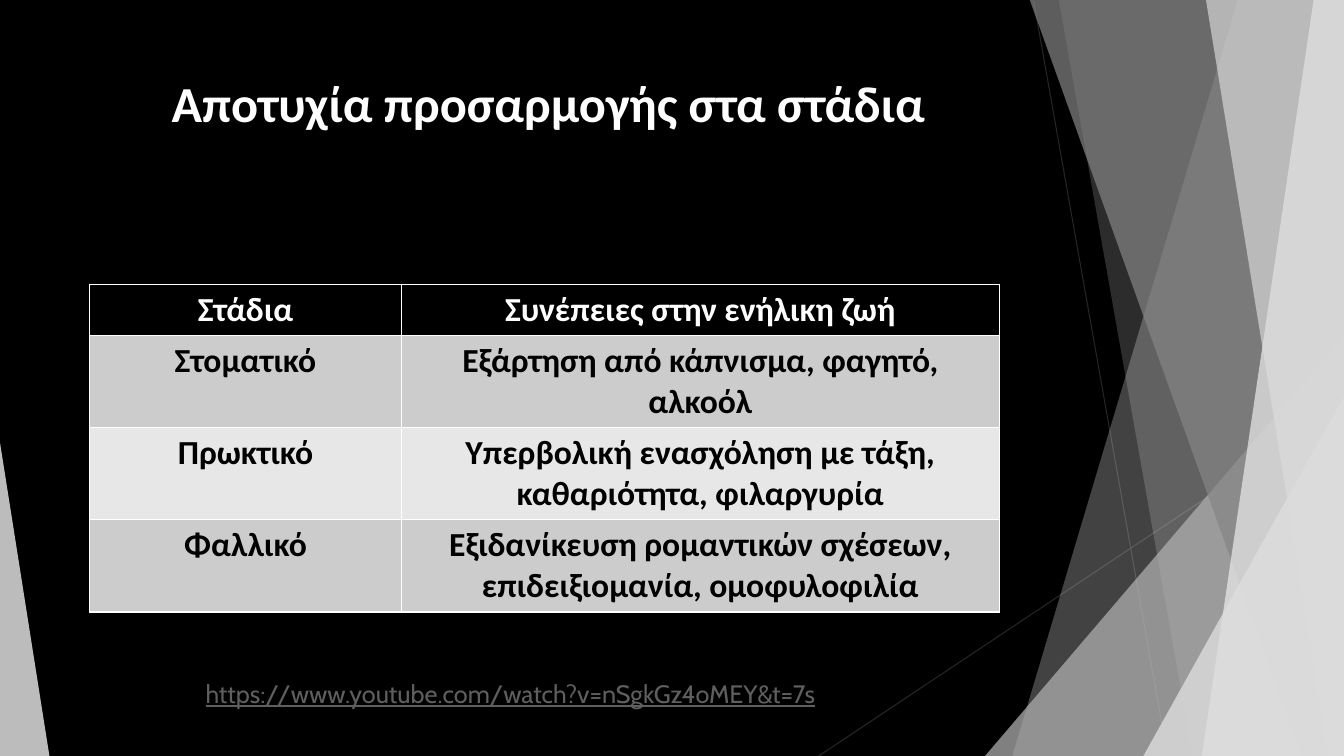
from dataclasses import dataclass

from lxml.etree import SubElement
from pptx import Presentation
from pptx.dml.color import RGBColor
from pptx.enum.shapes import MSO_CONNECTOR, MSO_SHAPE
from pptx.enum.text import MSO_ANCHOR, PP_ALIGN
from pptx.oxml.ns import qn
from pptx.util import Inches, Pt


@dataclass(frozen=True)
class Theme:
    """Colours, fonts and type sizes of the slide."""

    black: str = "000000"
    white: str = "FFFFFF"
    hairline: str = "262626"
    link: str = "5F5F5F"
    pale: str = "DDDDDD"
    silver: str = "B2B2B2"
    grey: str = "858585"
    bright: str = "EBEBEB"
    bands: tuple = ("CCCCCC", "E7E7E7")
    heading_font: str = "Calibri"
    body_font: str = "Cabin"
    title_size: int = 36
    table_size: int = 24
    link_size: int = 18
    rule: float = 0.75
    border: float = 1


def write(frame, text, *, size, font, color, bold=False, underline=False, align=PP_ALIGN.LEFT):
    """Put one formatted paragraph into a text frame."""
    para = frame.paragraphs[0]
    para.alignment = align
    span = para.add_run()
    span.text = text
    span.font.size = Pt(size)
    span.font.name = font
    span.font.bold = bold
    span.font.underline = underline
    span.font.color.rgb = RGBColor.from_string(color)


class Page:
    """Draws the elements of one slide in a shared theme."""

    def __init__(self, deck, theme):
        """Add a title-only slide with a plain background."""
        self.theme = theme
        self.slide = deck.slides.add_slide(deck.slide_layouts[5])
        self.shapes = self.slide.shapes
        background = self.slide.background.fill
        background.solid()
        background.fore_color.rgb = RGBColor.from_string(theme.black)

    def paint(self, shape, color, opacity):
        """Give a shape a translucent fill without outline or shadow."""
        shape.shadow.inherit = False
        shape.line.fill.background()
        shape.fill.solid()
        shape.fill.fore_color.rgb = RGBColor.from_string(color)
        tint = shape.fill._xPr.find(qn("a:solidFill"))[0]
        SubElement(tint, qn("a:alpha"), val=str(opacity * 1000))

    def hairline(self, start, end):
        """Draw a thin straight line between two points."""
        ends = [Inches(value) for value in (*start, *end)]
        line = self.shapes.add_connector(MSO_CONNECTOR.STRAIGHT, *ends)
        line.line.width = Pt(self.theme.rule)
        line.line.color.rgb = RGBColor.from_string(self.theme.hairline)
        SubElement(line._element.spPr, qn("a:effectLst"))

    def ray(self, top, bottom, color, opacity):
        """Draw a full-height band from a slanted left edge to the right edge."""
        corners = [(top, -0.01), (13.33, -0.01), (13.33, 7.5), (bottom, 7.5)]
        points = [(Inches(x), Inches(y)) for x, y in corners]
        builder = self.shapes.build_freeform(*points[0], scale=1.0)
        builder.add_line_segments(points[1:], close=True)
        self.paint(builder.convert_to_shape(), color, opacity)

    def triangle(self, left, width, height, apex, color, opacity):
        """Draw a triangle that stands on the bottom edge."""
        box = [Inches(value) for value in (left, 7.5 - height, width, height)]
        shape = self.shapes.add_shape(MSO_SHAPE.ISOSCELES_TRIANGLE, *box)
        shape.adjustments[0] = apex
        self.paint(shape, color, opacity)

    def title(self, text, left, top, width, height):
        """Place and fill the title placeholder."""
        box = self.shapes.title
        box.left, box.top = Inches(left), Inches(top)
        box.width, box.height = Inches(width), Inches(height)
        box.text_frame.vertical_anchor = MSO_ANCHOR.TOP
        box.text_frame.word_wrap = True
        write(box.text_frame, text, size=self.theme.title_size, font=self.theme.heading_font,
              color=self.theme.white, bold=True, align=PP_ALIGN.CENTER)

    def outline(self, cell):
        """Draw the four borders of a table cell."""
        properties = cell._tc.get_or_add_tcPr()
        for position, side in enumerate(("lnL", "lnR", "lnT", "lnB")):
            edge = SubElement(properties, qn(f"a:{side}"), w=str(Pt(self.theme.border)))
            fill = SubElement(edge, qn("a:solidFill"))
            SubElement(fill, qn("a:srgbClr"), val=self.theme.white)
            properties.insert(position, edge)

    def table(self, rows, left, top, widths, heights):
        """Draw a table with a dark header and banded rows."""
        theme = self.theme
        table = self.shapes.add_table(len(rows), len(widths), Inches(left), Inches(top),
                                      Inches(sum(widths)), Inches(sum(heights))).table
        for column, width in zip(table.columns, widths):
            column.width = Inches(width)
        for index, (row, height) in enumerate(zip(rows, heights)):
            table.rows[index].height = Inches(height)
            fill = theme.bands[(index - 1) % 2] if index else theme.black
            color = theme.black if index else theme.white
            for cell, text in zip(table.rows[index].cells, row):
                cell.fill.solid()
                cell.fill.fore_color.rgb = RGBColor.from_string(fill)
                self.outline(cell)
                write(cell.text_frame, text, size=theme.table_size, font=theme.heading_font,
                      color=color, bold=True, align=PP_ALIGN.CENTER)

    def address(self, text, left, top, width, height):
        """Write an underlined web address."""
        box = self.shapes.add_textbox(Inches(left), Inches(top), Inches(width), Inches(height))
        box.text_frame.word_wrap = True
        write(box.text_frame, text, size=self.theme.link_size, font=self.theme.body_font,
              color=self.theme.link, underline=True)


def main():
    """Build the slide and save it."""
    deck = Presentation()
    deck.slide_width, deck.slide_height = Inches(13.33), Inches(7.5)
    theme = Theme()
    page = Page(deck, theme)

    page.hairline((10.25, 0), (11.58, 7.5))
    page.hairline((13.33, 4.03), (8.12, 7.5))
    page.ray(12.28, 10.04, theme.pale, 30)
    page.ray(10.5, 11.83, theme.pale, 20)
    page.triangle(9.77, 3.56, 4.17, 1, theme.silver, 72)
    page.ray(10.21, 12.91, theme.grey, 70)
    page.ray(13.03, 11.92, theme.bright, 70)
    page.ray(11.96, 13.18, theme.pale, 65)
    page.triangle(11.34, 1.99, 3.57, 1, theme.pale, 80)
    page.triangle(0, 0.49, 3.11, 0, theme.pale, 85)

    page.title("Αποτυχία προσαρμογής στα στάδια", 0.74, 0.67, 9.4, 1.44)
    stages = [
        ("Στάδια", "Συνέπειες στην ενήλικη ζωή"),
        ("Στοματικό", "Εξάρτηση από κάπνισμα, φαγητό, αλκοόλ"),
        ("Πρωκτικό", "Υπερβολική ενασχόληση με τάξη, καθαριότητα, φιλαργυρία"),
        ("Φαλλικό", "Εξιδανίκευση ρομαντικών σχέσεων, επιδειξιομανία, ομοφυλοφιλία"),
    ]
    page.table(stages, 0.89, 2.82, (3.09, 5.93), (0.51, 0.91, 0.91, 0.91))
    page.address("https://www.youtube.com/watch?v=nSgkGz4oMEY&t=7s", 1.94, 6.68, 6.67, 0.4)
    deck.save("out.pptx")


if __name__ == "__main__":
    main()
